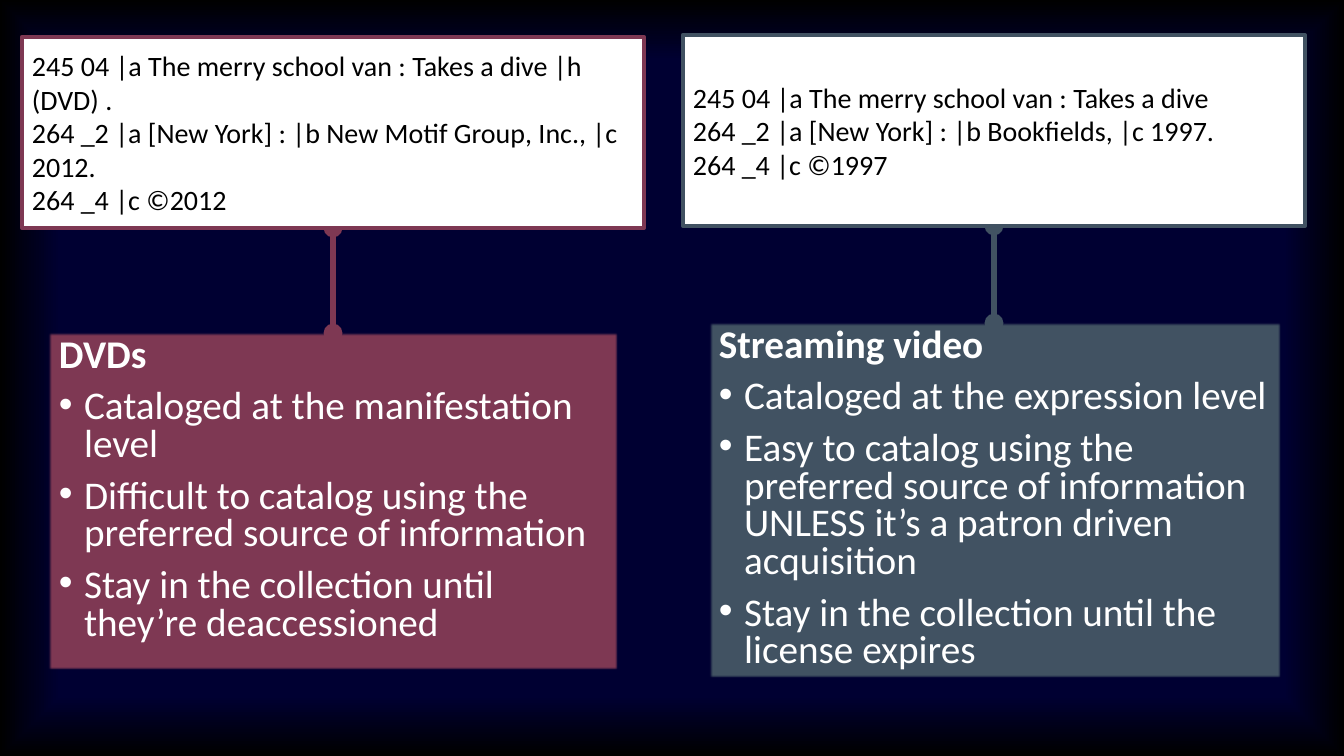
from dataclasses import dataclass

from lxml.etree import SubElement
from pptx import Presentation
from pptx.dml.color import RGBColor
from pptx.enum.shapes import MSO_CONNECTOR as Connector, MSO_SHAPE as Shape
from pptx.enum.text import MSO_ANCHOR as Anchor, PP_ALIGN as Align
from pptx.oxml import parse_xml
from pptx.oxml.ns import nsdecls, qn
from pptx.util import Emu, Pt

EMU_PER_PX = 914400 / 100.8
SLIDE_SIZE = (1344, 756)
RECORD_SIZE = (622, 191)


@dataclass(frozen=True)
class Theme:
    font: str = "Calibri"
    panel_size: int = 28
    record_size: int = 20
    navy: str = "000032"
    black: str = "000000"
    white: str = "FFFFFF"
    plum: str = "7E3853"
    slate: str = "415262"


THEME = Theme()

FORMATS = [
    {
        "color": THEME.plum,
        "record_at": (22, 37),
        "record": [
            "245 04 |a The merry school van : Takes a dive |h (DVD) .",
            "264 _2 |a [New York] : |b New Motif Group, Inc., |c 2012.",
            "264 _4 |c ©2012",
        ],
        "panel_box": (49, 333, 569, 337),
        "heading": "DVDs",
        "points": [
            "Cataloged at the manifestation level",
            "Difficult to catalog using the preferred source of information",
            "Stay in the collection until they’re deaccessioned",
        ],
    },
    {
        "color": THEME.slate,
        "record_at": (683, 35),
        "record": [
            "245 04 |a The merry school van : Takes a dive",
            "264 _2 |a [New York] : |b Bookfields, |c 1997.",
            "264 _4 |c ©1997",
        ],
        "panel_box": (709, 323, 572, 355),
        "heading": "Streaming video",
        "points": [
            "Cataloged at the expression level",
            "Easy to catalog using the preferred source of information "
            "UNLESS it’s a patron driven acquisition",
            "Stay in the collection until the license expires",
        ],
    },
]


def px(length):
    return Emu(round(length * EMU_PER_PX))


def rgb(color):
    return RGBColor.from_string(color)


def paint_background(slide):
    """Fill the slide with navy that darkens to black at its edges."""
    slide.background.fill.solid()
    properties = slide.background.fill._xPr
    properties.replace(properties.find(qn("a:solidFill")), parse_xml(
        f'<a:gradFill rotWithShape="1" {nsdecls("a")}><a:gsLst>'
        f'<a:gs pos="84000"><a:srgbClr val="{THEME.navy}"/></a:gs>'
        f'<a:gs pos="100000"><a:srgbClr val="{THEME.black}"/></a:gs></a:gsLst>'
        '<a:path path="shape"><a:fillToRect l="50000" t="50000" r="50000" b="50000"/>'
        '</a:path></a:gradFill>'))


def add_box(slide, box, fill, anchor):
    rectangle = slide.shapes.add_shape(Shape.RECTANGLE, *map(px, box))
    rectangle.shadow.inherit = False
    rectangle.fill.solid()
    rectangle.fill.fore_color.rgb = rgb(fill)
    rectangle.line.fill.background()
    rectangle.text_frame.word_wrap = True
    rectangle.text_frame.vertical_anchor = anchor
    return rectangle


def write_lines(frame, lines, size, color):
    """Write one left-aligned paragraph per line and return the paragraphs."""
    for index, line in enumerate(lines):
        paragraph = frame.add_paragraph() if index else frame.paragraphs[0]
        paragraph.alignment = Align.LEFT
        run = paragraph.add_run()
        run.text = line
        run.font.name = THEME.font
        run.font.size = Pt(size)
        run.font.color.rgb = rgb(color)
    return frame.paragraphs


def add_bullet(paragraph):
    properties = paragraph._p.get_or_add_pPr()
    properties.set("marL", "228600")
    properties.set("indent", "-228600")
    SubElement(properties, qn("a:buFont"), typeface="Arial")
    SubElement(properties, qn("a:buChar"), char="•")


def add_panel(slide, box, color, heading, points):
    panel = add_box(slide, box, color, Anchor.TOP)
    effects = panel._element.spPr.find(qn("a:effectLst"))
    SubElement(effects, qn("a:softEdge"), rad="12700")
    paragraphs = write_lines(
        panel.text_frame, [heading, *points], THEME.panel_size, THEME.white)
    for paragraph in paragraphs:
        paragraph.line_spacing = 0.8
        paragraph.space_before = Pt(10)
    paragraphs[0].runs[0].font.bold = True
    for paragraph in paragraphs[1:]:
        add_bullet(paragraph)


def add_link(slide, x, top, bottom, color):
    """Join a record to its panel with a line that has round ends."""
    link = slide.shapes.add_connector(
        Connector.STRAIGHT, px(x), px(top), px(x), px(bottom))
    link.line.color.rgb = rgb(color)
    link.line.width = Pt(4.5)
    outline = link.line._get_or_add_ln()
    for end in ("a:headEnd", "a:tailEnd"):
        SubElement(outline, qn(end), type="oval")
    SubElement(link._element.spPr, qn("a:effectLst"))


def add_record(slide, box, color, lines):
    record = add_box(slide, box, THEME.white, Anchor.MIDDLE)
    record.line.color.rgb = rgb(color)
    record.line.width = Pt(3)
    write_lines(record.text_frame, lines, THEME.record_size, THEME.black)


def add_format(slide, color, record_at, record, panel_box, heading, points):
    left, top = record_at
    width, height = RECORD_SIZE
    add_panel(slide, panel_box, color, heading, points)
    add_link(slide, left + width // 2, top + height, panel_box[1], color)
    add_record(slide, (left, top, width, height), color, record)


def main():
    deck = Presentation()
    deck.slide_width, deck.slide_height = map(px, SLIDE_SIZE)
    slide = deck.slides.add_slide(deck.slide_layouts[6])
    paint_background(slide)
    for video_format in FORMATS:
        add_format(slide, **video_format)
    deck.save("out.pptx")


if __name__ == "__main__":
    main()
